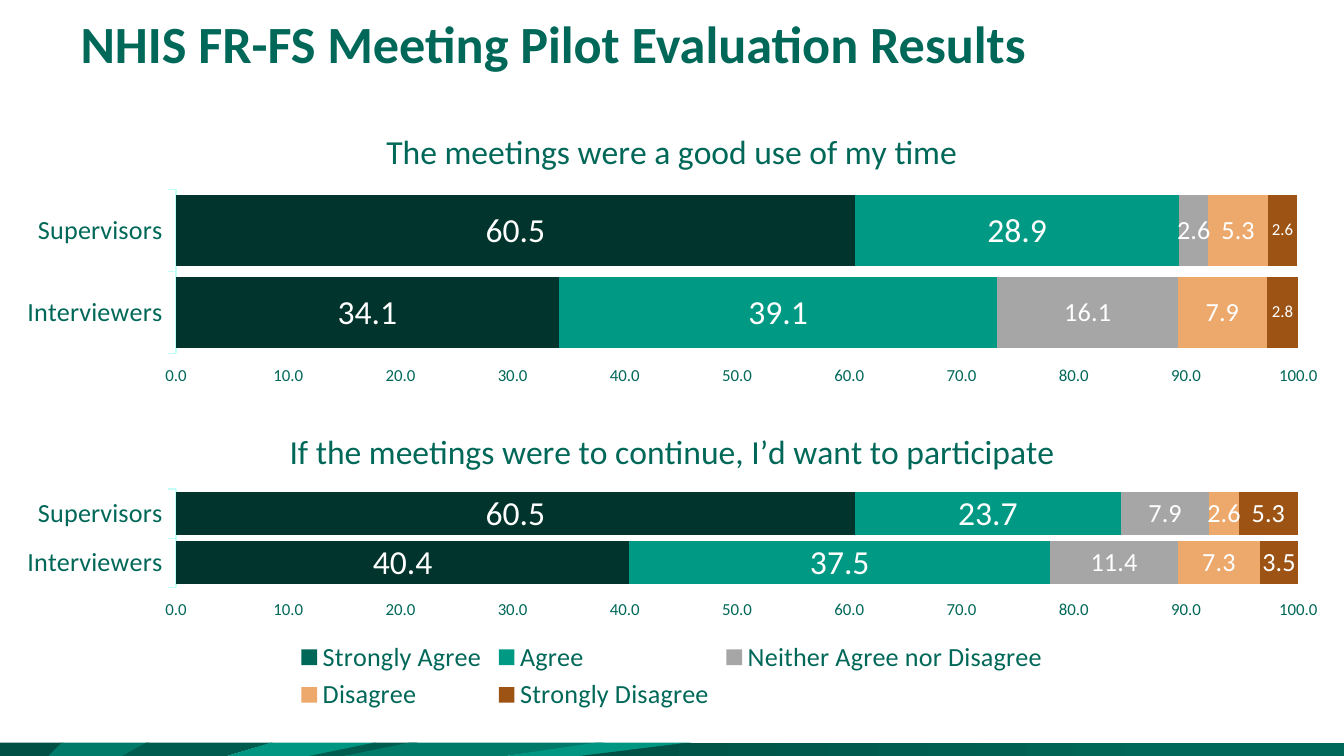
from lxml import etree
from pptx import Presentation
from pptx.chart.data import CategoryChartData as Data
from pptx.dml.color import RGBColor as RGB
from pptx.enum.chart import XL_CHART_TYPE as Kind
from pptx.enum.chart import XL_LABEL_POSITION as Spot
from pptx.enum.chart import XL_LEGEND_POSITION as Side
from pptx.enum.text import MSO_ANCHOR as Anchor, PP_ALIGN as Align
from pptx.oxml.ns import qn
from pptx.util import Inches, Pt

FONT = "Calibri"
WIDE = 10
HIGH = WIDE * 9 / 16
GREEN = RGB(0x00, 0x68, 0x58)
DARK = RGB(0x00, 0x34, 0x2C)
TEAL = RGB(0x00, 0x9A, 0x84)
GRAY = RGB(0xA6, 0xA6, 0xA6)
SAND = RGB(0xED, 0xA8, 0x6C)
BROWN = RGB(0x9C, 0x53, 0x14)
MINT = RGB(0xC2, 0xFF, 0xF6)
WHITE = RGB(0xFF, 0xFF, 0xFF)
DEEP = RGB(0x00, 0x50, 0x45)
PINE = RGB(0x00, 0x5C, 0x4F)
JADE = RGB(0x00, 0x7A, 0x69)
LIGHT = RGB(0x00, 0x96, 0x81)

TITLE = "NHIS FR-FS Meeting Pilot Evaluation Results"
GROUPS = ["Interviewers", "Supervisors"]
FILLS = [DARK, TEAL, GRAY, SAND, BROWN]
# Lengths in inches: chart top and height, left of its title, plot height
CHARTS = [
    dict(
        title="The meetings were a good use of my time",
        top=0.81, high=2.11, head=2.83, plot=1.22,
        names=[f"Series {n}" for n in range(1, 6)],
        rows=[(34.1, 60.5), (39.1, 28.9), (16.1, 2.6), (7.9, 5.3), (2.8, 2.6)],
        sizes=[18, 18, 14, 14, 9], legend=False,
    ),
    dict(
        title="If the meetings were to continue, I’d want to participate",
        top=3.04, high=2.29, head=2.11, plot=0.73,
        names=["Strongly Agree", "Agree", "Neither Agree nor Disagree",
               "Disagree", "Strongly Disagree"],
        rows=[(40.4, 60.5), (37.5, 23.7), (11.4, 7.9), (7.3, 2.6), (3.5, 5.3)],
        sizes=[18, 18, 14, 14, 14], legend=True,
    ),
]
HEAD_TOP = 0.1
PLOT_LEFT, PLOT_TOP, PLOT_WIDE = 1.31, 0.6, 8.35
# Top left, top right, bottom left, bottom right, colour
BANDS = [
    (0, 0.47, 0, 0.39, DEEP),
    (0.46, 1.11, 0.36, 0.92, JADE),
    (1.09, 2.03, 0.91, 1.69, PINE),
    (2.02, 2.8, 1.69, 2.34, LIGHT),
    (2.79, 3.11, 2.3, 2.57, PINE),
    (3.05, 4.5, 2.56, 3.77, JADE),
    (4.44, 5.15, 3.76, 4.35, LIGHT),
    (5.14, 10, 4.31, 10, None),
]


def style(font, size, color=GREEN):
    font.name, font.size, font.bold = FONT, Pt(size), False
    font.color.rgb = color


def place(node, after, **parts):
    """Give a chart part a manual layout, put after the named child."""
    for old in node.findall(qn("c:layout")):
        node.remove(old)
    layout = etree.Element(qn("c:layout"))
    manual = etree.SubElement(layout, qn("c:manualLayout"))
    for tag, val in parts.items():
        etree.SubElement(manual, qn(f"c:{tag}")).set("val", str(val))
    spot = 0 if after is None else node.index(node.find(qn(after))) + 1
    node.insert(spot, layout)


def draw_bands(slide):
    top, low = Inches(HIGH - 0.1), Inches(HIGH)
    for *xs, color in BANDS:
        a, b, c, d = map(Inches, xs)
        pen = slide.shapes.build_freeform(b, top)
        pen.add_line_segments([(a, top), (c, low), (d, low)], close=True)
        band = pen.convert_to_shape()
        band.shadow.inherit = False
        band.line.fill.background()
        if color is not None:
            band.fill.solid()
            band.fill.fore_color.rgb = color
            continue
        band.fill.gradient()
        band.fill.gradient_angle = 0
        for stop, at, tone in zip(band.fill.gradient_stops, (0, 0.78), (DEEP, GREEN)):
            stop.position, stop.color.rgb = at, tone


def draw_chart(slide, item):
    data = Data(number_format="0.0")
    data.categories = GROUPS
    for name, row in zip(item["names"], item["rows"]):
        data.add_series(name, row)
    high = item["high"]
    chart = slide.shapes.add_chart(
        Kind.BAR_STACKED, 0, Inches(item["top"]), Inches(WIDE),
        Inches(high), data).chart
    style(chart.font, 10)

    frame = chart.chart_title.text_frame
    frame.text = item["title"]
    style(frame.paragraphs[0].runs[0].font, 18)
    place(chart.chart_title._element, "c:tx", xMode="edge", yMode="edge",
          x=item["head"] / WIDE, y=HEAD_TOP / high)
    chart.chart_title.include_in_layout = False

    area = chart._chartSpace.chart.plotArea
    place(area, None, layoutTarget="inner", xMode="edge", yMode="edge",
          x=PLOT_LEFT / WIDE, y=PLOT_TOP / high,
          w=PLOT_WIDE / WIDE, h=item["plot"] / high)

    cat, val = chart.category_axis, chart.value_axis
    style(cat.tick_labels.font, 14)
    cat.format.line.color.rgb, cat.format.line.width = MINT, Pt(0.75)
    style(val.tick_labels.font, 9)
    val.format.line.fill.background()
    val.has_major_gridlines = False
    val.minimum_scale, val.maximum_scale, val.major_unit = 0, 100, 10
    val.tick_labels.number_format = "0.0"
    val.tick_labels.number_format_is_linked = False

    plot = chart.plots[0]
    plot.gap_width, plot.overlap, plot.vary_by_categories = 15, 100, False
    for series, color, size in zip(plot.series, FILLS, item["sizes"]):
        series.format.fill.solid()
        series.format.fill.fore_color.rgb = color
        labels = series.data_labels
        style(labels.font, size, WHITE)
        labels.number_format, labels.number_format_is_linked = "0.0", False
        labels.show_value, labels.position = True, Spot.CENTER

    chart.has_legend = item["legend"]
    if item["legend"]:
        chart.legend.position = Side.BOTTOM
        chart.legend.include_in_layout = False
        style(chart.legend.font, 14)
        # The legend key is lighter than the bars of the first series.
        first = plot.series[0]
        first.format.fill.fore_color.rgb = GREEN
        for n in range(len(GROUPS)):
            fill = first.points[n].format.fill
            fill.solid()
            fill.fore_color.rgb = DARK


def main():
    deck = Presentation()
    deck.slide_width, deck.slide_height = Inches(WIDE), Inches(HIGH)
    slide = deck.slides.add_slide(deck.slide_layouts[5])
    draw_bands(slide)

    title = slide.shapes.title
    title.left, title.top = Inches(0.5), 0
    title.width, title.height = Inches(9), Inches(0.6)
    frame = title.text_frame
    frame.text, frame.vertical_anchor = TITLE, Anchor.BOTTOM
    head = frame.paragraphs[0]
    head.alignment, head.line_spacing = Align.LEFT, Pt(30)
    style(head.font, 28)
    head.font.bold = True

    for item in CHARTS:
        draw_chart(slide, item)
    deck.save("out.pptx")


if __name__ == "__main__":
    main()
